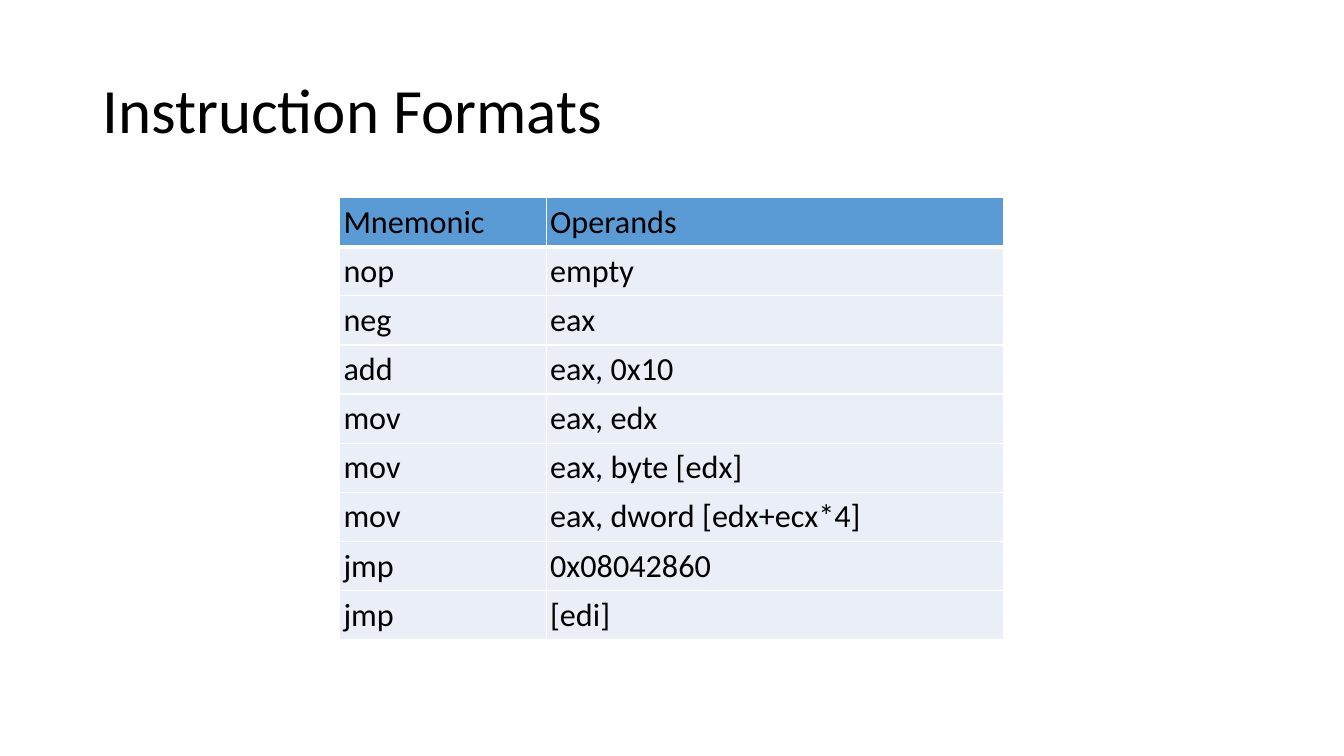
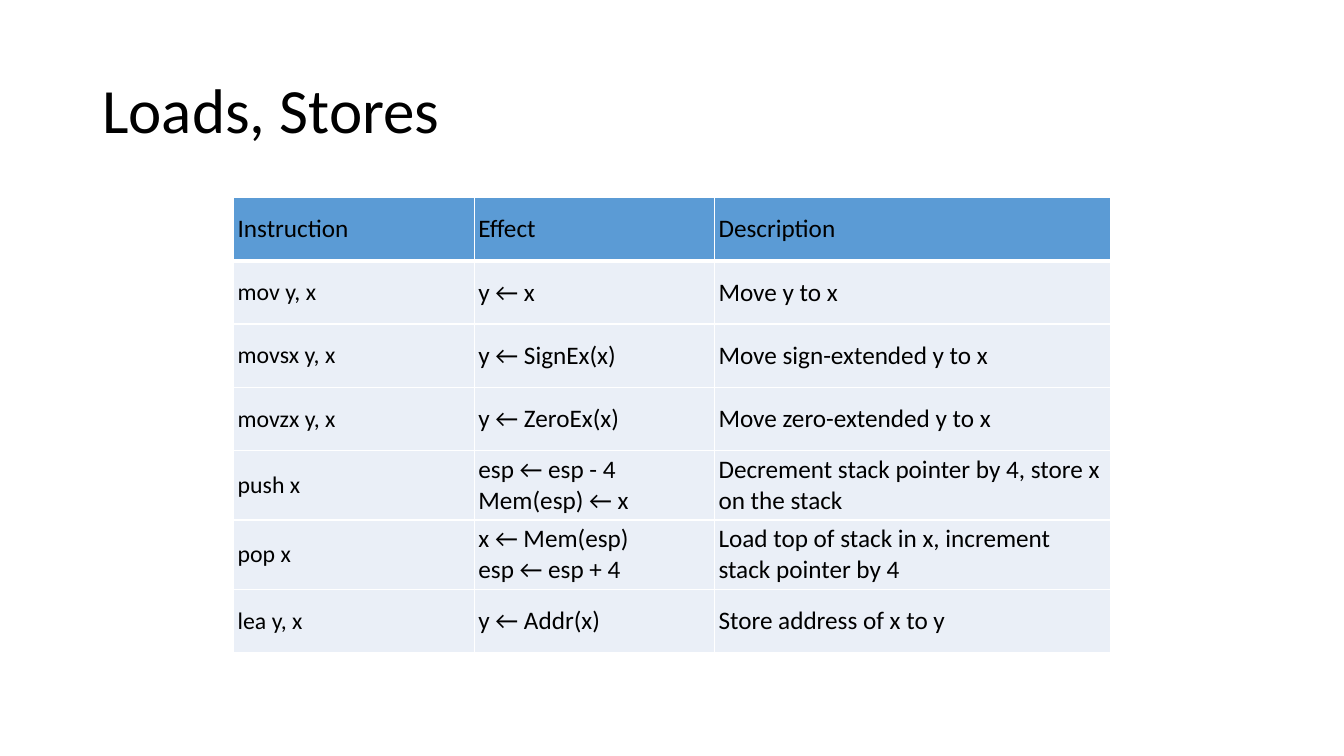
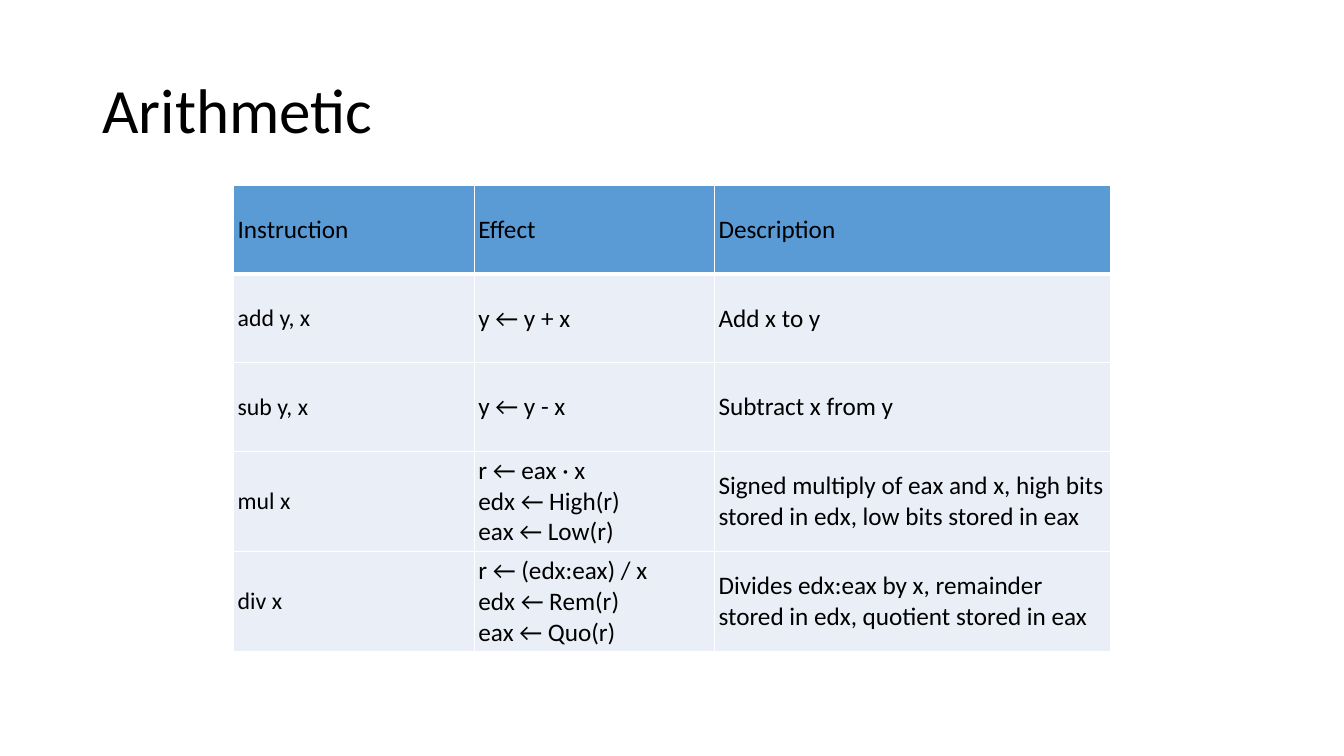
from pptx import Presentation
from pptx.util import Pt
from pptx.dml.color import RGBColor as RGB
from pptx.enum.text import MSO_ANCHOR as Anchor
from pptx.oxml import parse_xml
from pptx.oxml.ns import nsdecls

# Shared style
COLORS = {"text": "000000", "head": "5B9BD5", "body": "EAEFF7", "rule": "FFFFFF"}
FONT = "Calibri"
TITLE = (66, 28.8, 828, 104.4)
INSET = 2.8
LINE = 22  # height of one text line in a tall row

# Content
WIDE = {"left": 167, "cols": (172, 171.5, 282.5), "sizes": (17, 18, 18), "head": 18}
HEADS = ("Instruction", "Effect", "Description")
SLIDES = [
    {"title": "Instruction Formats", "left": 242.6, "top": 141.1, "row": 35.1,
     "cols": (147.6, 326.8), "sizes": (23, 23), "head": 23,
     "cells": [
         ("Mnemonic", "Operands"),
         ("nop", "empty"),
         ("neg", "eax"),
         ("add", "eax, 0x10"),
         ("mov", "eax, edx"),
         ("mov", "eax, byte [edx]"),
         ("mov", "eax, dword [edx+ecx*4]"),
         ("jmp", "0x08042860"),
         ("jmp", "[edi]")]},
    {"title": "Loads, Stores", "top": 141.1, "row": 45.2, **WIDE,
     "cells": [
         HEADS,
         ("mov y, x", "y ← x", "Move y to x"),
         ("movsx y, x", "y ← SignEx(x)", "Move sign-extended y to x"),
         ("movzx y, x", "y ← ZeroEx(x)", "Move zero-extended y to x"),
         ("push x", "esp ← esp - 4\nMem(esp) ← x",
          "Decrement stack pointer by 4, store x on the stack"),
         ("pop x", "x ← Mem(esp)\nesp ← esp + 4",
          "Load top of stack in x, increment stack pointer by 4"),
         ("lea y, x", "y ← Addr(x)", "Store address of x to y")]},
    {"title": "Arithmetic", "top": 132.5, "row": 63.3, **WIDE,
     "cells": [
         HEADS,
         ("add y, x", "y ← y + x", "Add x to y"),
         ("sub y, x", "y ← y - x", "Subtract x from y"),
         ("mul x", "r ← eax · x\nedx ← High(r)\neax ← Low(r)",
          "Signed multiply of eax and x, high bits stored in edx, low bits stored in eax"),
         ("div x", "r ← (edx:eax) / x\nedx ← Rem(r)\neax ← Quo(r)",
          "Divides edx:eax by x, remainder stored in edx, quotient stored in eax")]},
]


def write(frame, text, size, color="text", space=None):
    """Fill a text frame with one paragraph; newlines become line breaks."""
    para = frame.paragraphs[0]
    para.text = text
    if space:
        para.line_spacing = space
    for run in para.runs:
        run.font.name = FONT
        run.font.size = Pt(size)
        run.font.color.rgb = RGB.from_string(COLORS[color])


def add_title(slide, text):
    frame = slide.shapes.add_textbox(*map(Pt, TITLE)).text_frame
    frame.word_wrap = True
    frame.vertical_anchor = Anchor.MIDDLE
    write(frame, text, 45, space=0.9)


def add_rules(cell, row):
    """White cell borders, with a thick one below the header row."""
    widths = {"L": 1, "R": 1, "T": 3 if row == 1 else 1, "B": 3 if row == 0 else 1}
    props = cell._tc.get_or_add_tcPr()
    for side, width in widths.items():
        props.append(parse_xml(
            f'<a:ln{side} {nsdecls("a")} w="{Pt(width)}"><a:solidFill>'
            f'<a:srgbClr val="{COLORS["rule"]}"/></a:solidFill></a:ln{side}>'))


def add_grid(slide, data):
    cells, cols = data["cells"], data["cols"]
    # A row grows to hold its tallest cell
    rows = [max(data["row"], LINE * max(t.count("\n") + 1 for t in line) + 2 * INSET)
            for line in cells]
    table = slide.shapes.add_table(
        len(rows), len(cols), Pt(data["left"]), Pt(data["top"]),
        Pt(sum(cols)), Pt(sum(rows))).table
    table.horz_banding = False
    for col, width in zip(table.columns, cols):
        col.width = Pt(width)
    for r, (line, height) in enumerate(zip(cells, rows)):
        table.rows[r].height = Pt(height)
        for c, text in enumerate(line):
            cell = table.cell(r, c)
            cell.margin_left = cell.margin_right = Pt(INSET)
            cell.margin_top = cell.margin_bottom = Pt(INSET)
            cell.vertical_anchor = Anchor.MIDDLE
            add_rules(cell, r)
            cell.fill.solid()
            cell.fill.fore_color.rgb = RGB.from_string(COLORS["body" if r else "head"])
            write(cell.text_frame, text, data["sizes"][c] if r else data["head"])
            for run in cell.text_frame.paragraphs[0].runs:
                run.font.bold = False


def main():
    deck = Presentation()
    deck.slide_width, deck.slide_height = Pt(960), Pt(540)
    for data in SLIDES:
        slide = deck.slides.add_slide(deck.slide_layouts[6])
        add_title(slide, data["title"])
        add_grid(slide, data)
    deck.save("out.pptx")


if __name__ == "__main__":
    main()
